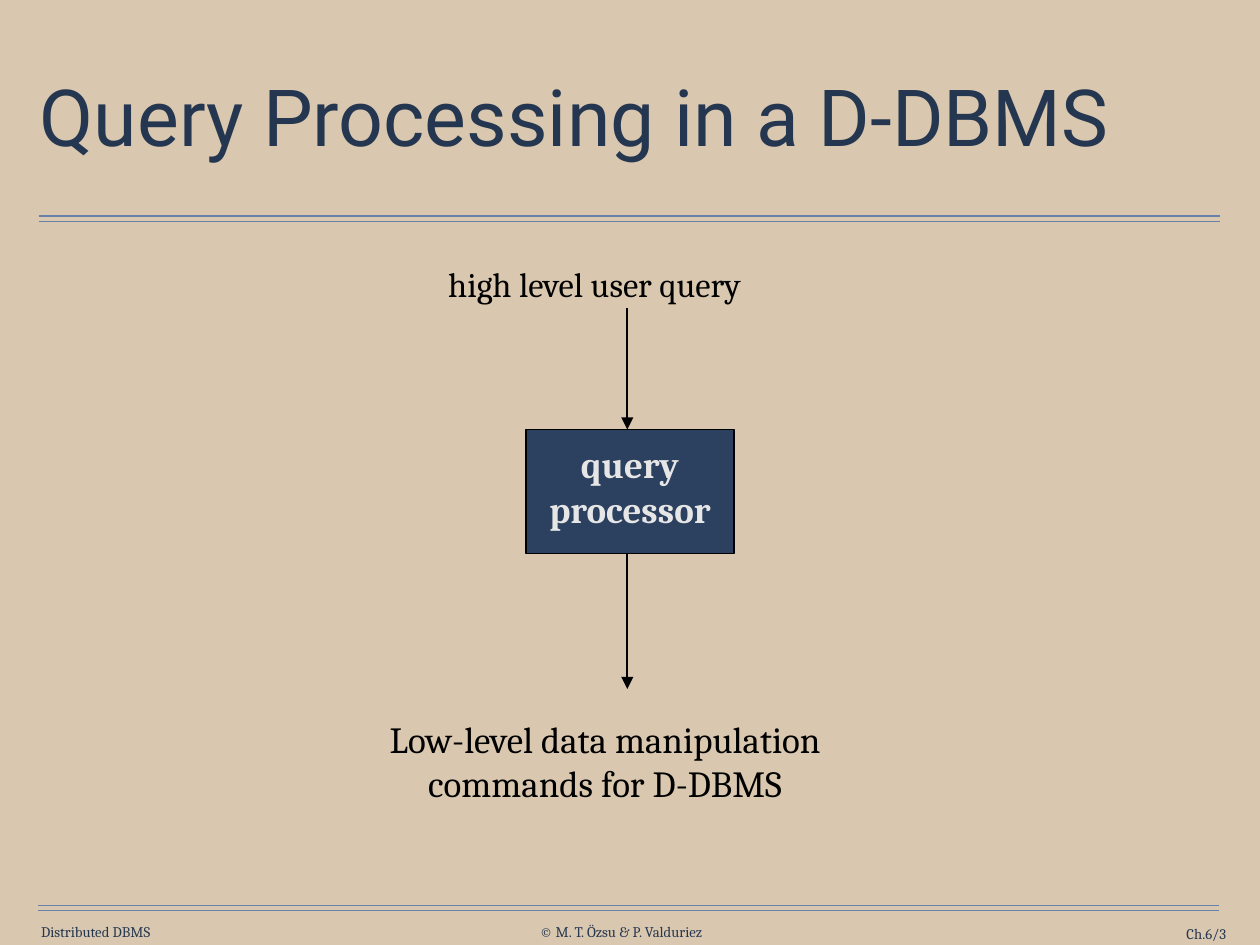
"""Builds the slide "Query Processing in a D-DBMS"."""
from lxml.etree import SubElement
from pptx import Presentation
from pptx.dml.color import RGBColor
from pptx.enum.shapes import MSO_CONNECTOR as Connector, MSO_SHAPE as Shape
from pptx.enum.text import MSO_ANCHOR as Anchor, MSO_AUTO_SIZE as AutoSize, PP_ALIGN as Align
from pptx.oxml.ns import qn
from pptx.util import Inches, Pt

COLORS = {
    "background": "D9C8AF", "title": "253750", "footer": "263750", "rule": "6682AA",
    "ink": "000000", "processor": "2C405F", "processor_text": "E6E6E6",
}
TITLE = "Query Processing in a D-DBMS"
FOOTERS = [
    ("Distributed DBMS", (0.39, 10.42, 1.38, 0.2), Align.CENTER),
    ("© M. T. Özsu & P. Valduriez", (5.91, 10.42, 2.2, 0.2), Align.CENTER),
    ("Ch.6/3", (12.3, 10.44, 1.54, 0.2), Align.RIGHT),
]
LABELS = [
    (["high level user query"], (4.66, 2.9, 4.1, 0.61), 28),
    (["Low-level data manipulation", "commands for D-DBMS"], (3.98, 8.02, 5.7, 1.15), 30),
]
PROCESSOR = (["query", "processor"], (5.94, 4.85, 2.34, 1.4), 30)
RULE_PAIRS = [(0.44, 2.44), (0.43, 10.22)]
RULE_LENGTH, RULE_GAP = 13.33, 0.06
ARROW_X = 7.08
ARROWS = [(3.48, 4.85), (6.25, 7.78)]


def color(name):
    return RGBColor.from_string(COLORS[name])


def format_font(para, size, color_name, name="Cambria", bold=False):
    para.font.name, para.font.size, para.font.bold = name, Pt(size), bold
    para.font.color.rgb = color(color_name)


def write(shape, lines, size, color_name, insets=(0, 0), align=Align.CENTER,
          anchor=Anchor.TOP, bold=False):
    frame = shape.text_frame
    frame.margin_left = frame.margin_right = Inches(insets[0])
    frame.margin_top = frame.margin_bottom = Inches(insets[1])
    frame.vertical_anchor = anchor
    frame.word_wrap = True
    frame.text = "\n".join(lines)
    for para in frame.paragraphs:
        para.alignment = align
        format_font(para, size, color_name, bold=bold)


def add_line(slide, start, end, color_name, width, arrow=False):
    line = slide.shapes.add_connector(
        Connector.STRAIGHT, *(Inches(value) for value in (*start, *end)))
    line.line.color.rgb = color(color_name)
    line.line.width = Pt(width)
    properties = line.line._get_or_add_ln()
    if arrow:
        SubElement(properties, qn("a:tailEnd"), type="triangle", w="lg", len="lg")
    SubElement(properties.getparent(), qn("a:effectLst"))


def add_title(slide):
    title = slide.shapes.title
    title.left, title.top, title.width, title.height = map(Inches, (0.39, 0.49, 13.44, 1.76))
    frame = title.text_frame
    frame.margin_left = frame.margin_right = Inches(0.06)
    frame.margin_top = frame.margin_bottom = Inches(0.06)
    frame.vertical_anchor = Anchor.MIDDLE
    frame.auto_size = AutoSize.NONE
    frame.text = TITLE
    para = frame.paragraphs[0]
    para.alignment, para.line_spacing = Align.LEFT, 0.9
    format_font(para, 64, "title", "Roboto")


def add_processor(slide):
    lines, place, size = PROCESSOR
    box = slide.shapes.add_shape(Shape.RECTANGLE, *map(Inches, place))
    box.shadow.inherit = False
    box.fill.solid()
    box.fill.fore_color.rgb = color("processor")
    box.line.color.rgb = color("ink")
    box.line.width = Pt(1.5)
    write(box, lines, size, "processor_text", (0.1, 0.14), bold=True)


def main():
    deck = Presentation()
    deck.slide_width, deck.slide_height = Inches(14.22), Inches(10.67)
    slide = deck.slides.add_slide(deck.slide_layouts.get_by_name("Title Only"))
    slide.background.fill.solid()
    slide.background.fill.fore_color.rgb = color("background")

    for left, top in RULE_PAIRS:
        for y in (top, top + RULE_GAP):
            add_line(slide, (left, y), (left + RULE_LENGTH, y), "rule", 1)
    for text, place, align in FOOTERS:
        box = slide.shapes.add_textbox(*map(Inches, place))
        write(box, [text], 12, "footer", align=align, anchor=Anchor.MIDDLE)

    add_title(slide)
    add_processor(slide)
    for lines, place, size in LABELS:
        box = slide.shapes.add_textbox(*map(Inches, place))
        write(box, lines, size, "ink", (0.14, 0.07))
    for top, bottom in ARROWS:
        add_line(slide, (ARROW_X, top), (ARROW_X, bottom), "ink", 1.5, arrow=True)
    deck.save("out.pptx")


if __name__ == "__main__":
    main()
